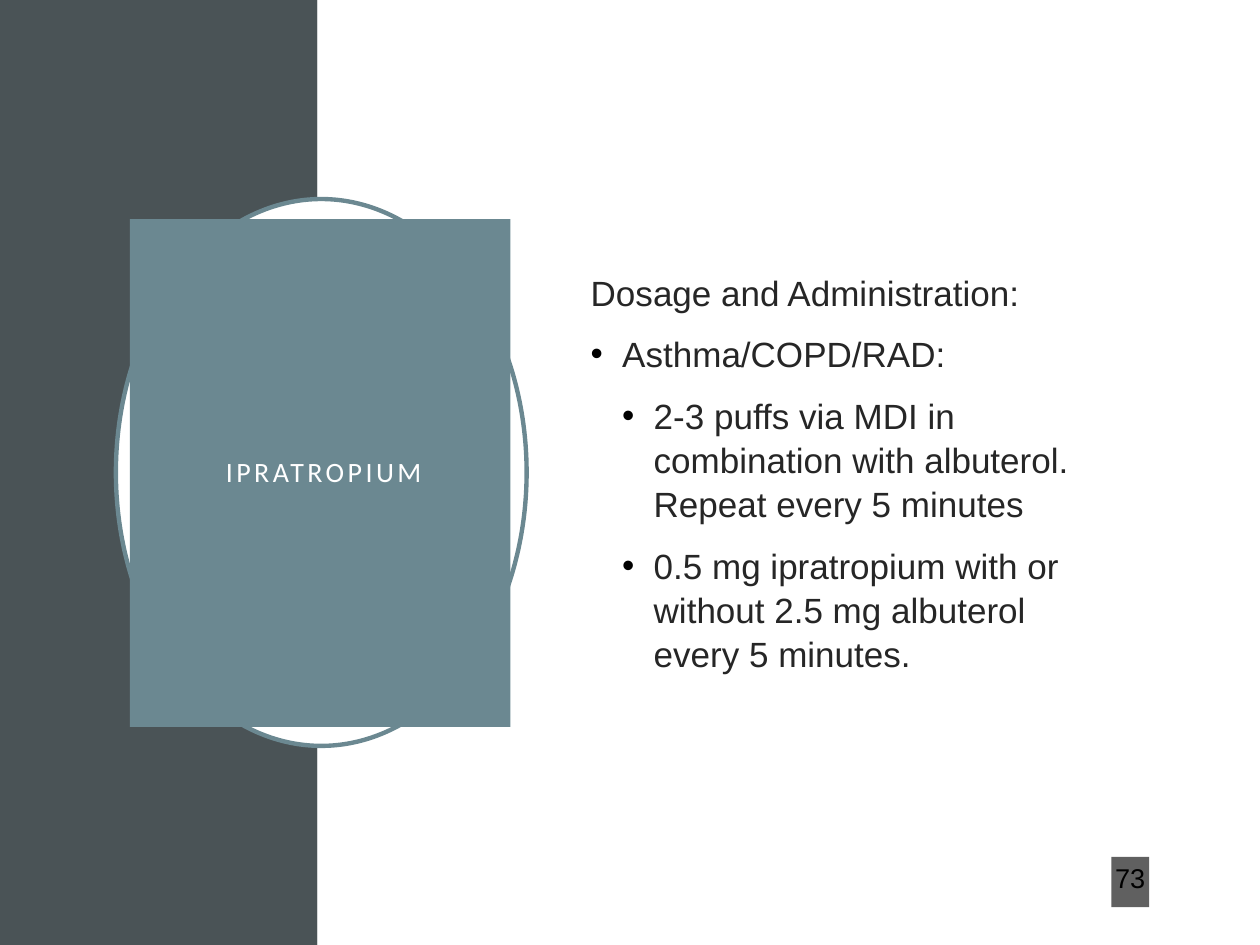
from lxml import etree
from pptx import Presentation
from pptx import util as u
from pptx.dml import color
from pptx.enum import shapes, text
from pptx.oxml import ns

WIDTH, HEIGHT = 10, 7.5
BAND_WIDTH = 2.52
SLATE, TEAL, WHITE = "4A5356", "6B8891", "FFFFFF"
TITLE = "IPRATROPIUM"
BODY = [
    (None, "Dosage and Administration:"),
    (0, "Asthma/COPD/RAD:"),
    (1, "2-3 puffs via MDI in combination with albuterol. Repeat every 5 minutes"),
    (1, "0.5 mg ipratropium with or without 2.5 mg albuterol every 5 minutes."),
]
PAGE_NUMBER = "73"


def rgb(value):
    return color.RGBColor.from_string(value)


def add_element(parent, tag, **attributes):
    return etree.SubElement(parent, ns.qn(tag), **attributes)


def add_block(slide, kind, box, fill, line=None):
    shape = slide.shapes.add_shape(kind, *map(u.Inches, box))
    shape.shadow.inherit = False
    shape.fill.solid()
    shape.fill.fore_color.rgb = rgb(fill)
    if line:
        shape.line.color.rgb = rgb(line)
        shape.line.width = u.Pt(2.5)
    else:
        shape.line.fill.background()
    return shape


def prepare_frame(shape, insets):
    frame = shape.text_frame
    frame.word_wrap = True
    frame.vertical_anchor = text.MSO_ANCHOR.MIDDLE
    frame.margin_left, frame.margin_top, frame.margin_right, frame.margin_bottom = map(u.Inches, insets)
    return frame


def add_run(paragraph, content, font, size, fill):
    run = paragraph.add_run()
    run.text = content
    run.font.name = font
    run.font.size = u.Pt(size)
    run.font.color.rgb = rgb(fill)
    return run


def add_bullet(paragraph, level):
    paragraph.level = level
    properties = paragraph._p.get_or_add_pPr()
    properties.set("marL", str(u.Inches(0.25 * (level + 1))))
    properties.set("indent", str(u.Inches(-0.25)))
    bullet_color = add_element(properties, "a:buClr")
    add_element(bullet_color, "a:srgbClr", val="000000")
    add_element(properties, "a:buFont", typeface="Arial")
    add_element(properties, "a:buChar", char="•")


def add_title(slide):
    panel = add_block(slide, shapes.MSO_SHAPE.RECTANGLE, (1.03, 1.74, 3.02, 4.03), TEAL)
    paragraph = prepare_frame(panel, (0.2, 0.2, 0.14, 0.2)).paragraphs[0]
    paragraph.alignment = text.PP_ALIGN.CENTER
    paragraph.line_spacing = 0.9
    run = add_run(paragraph, TITLE, "Calibri", 16, WHITE)
    run.font._element.set("spc", "200")


def add_body(slide):
    box = slide.shapes.add_textbox(*map(u.Inches, (4.59, 1.53, 4.36, 4.43)))
    frame = prepare_frame(box, (0.1, 0.05, 0.14, 0.05))
    for index, (level, content) in enumerate(BODY):
        paragraph = frame.add_paragraph() if index else frame.paragraphs[0]
        paragraph.line_spacing = 1.05
        if index:
            paragraph.space_before = u.Pt(10)
        if level is not None:
            add_bullet(paragraph, level)
        add_run(paragraph, content, "Arial", 20, "262626")


def add_page_number(slide):
    badge = add_block(slide, shapes.MSO_SHAPE.RECTANGLE, (8.82, 6.8, 0.3, 0.4), "1D1D1D")
    fill_color = badge._element.spPr.find(ns.qn("a:solidFill"))[0]
    add_element(fill_color, "a:alpha", val="70000")
    paragraph = prepare_frame(badge, (0.02, 0.05, 0.02, 0.05)).paragraphs[0]
    paragraph.alignment = text.PP_ALIGN.CENTER
    paragraph.line_spacing = 0.7
    paragraph.space_after = u.Pt(6)
    add_run(paragraph, PAGE_NUMBER, "Arial", 15.5, "000000")


def main():
    presentation = Presentation()
    presentation.slide_width = u.Inches(WIDTH)
    presentation.slide_height = u.Inches(HEIGHT)
    slide = presentation.slides.add_slide(presentation.slide_layouts[6])
    rectangle, oval = shapes.MSO_SHAPE.RECTANGLE, shapes.MSO_SHAPE.OVAL
    add_block(slide, rectangle, (0, 0, BAND_WIDTH, HEIGHT), SLATE)
    add_block(slide, rectangle, (BAND_WIDTH, 0, WIDTH - BAND_WIDTH, HEIGHT), WHITE)
    add_block(slide, oval, (0.92, 1.58, 3.26, 4.34), WHITE, TEAL)
    add_title(slide)
    add_body(slide)
    add_page_number(slide)
    presentation.save("out.pptx")


if __name__ == "__main__":
    main()
